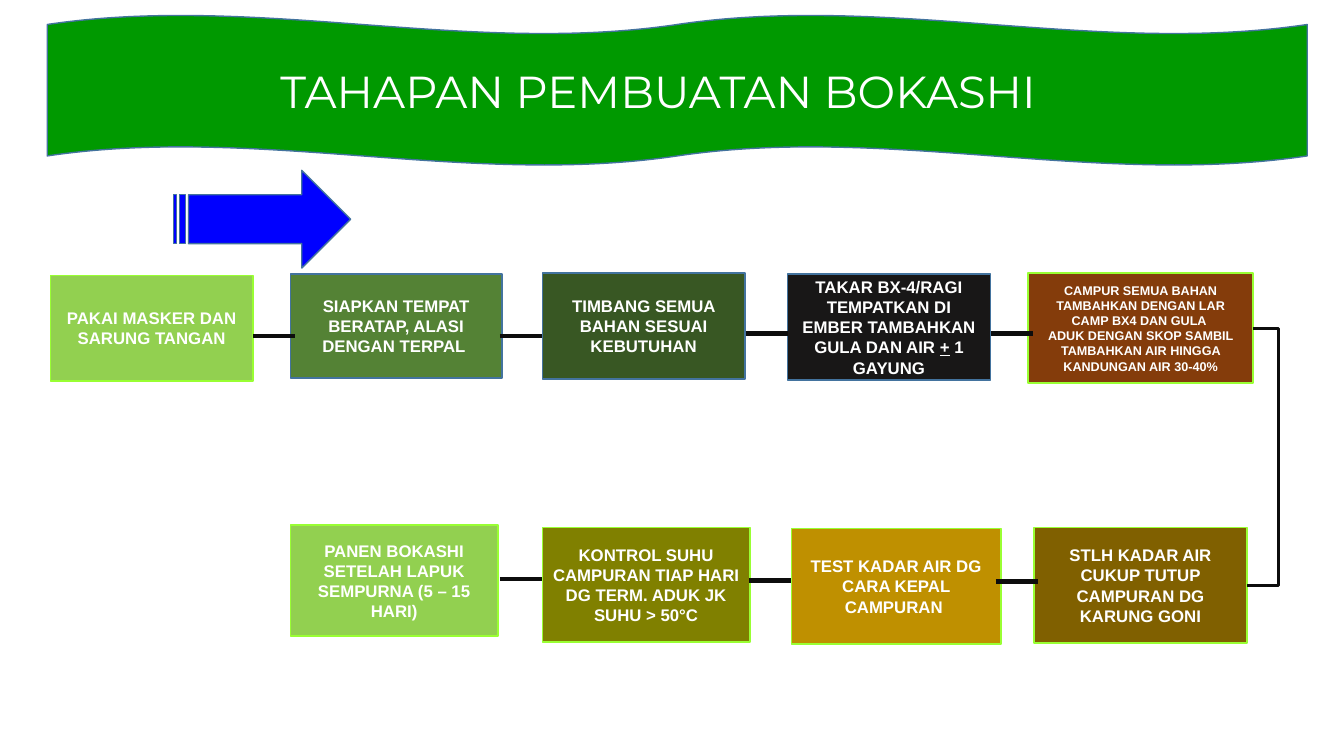
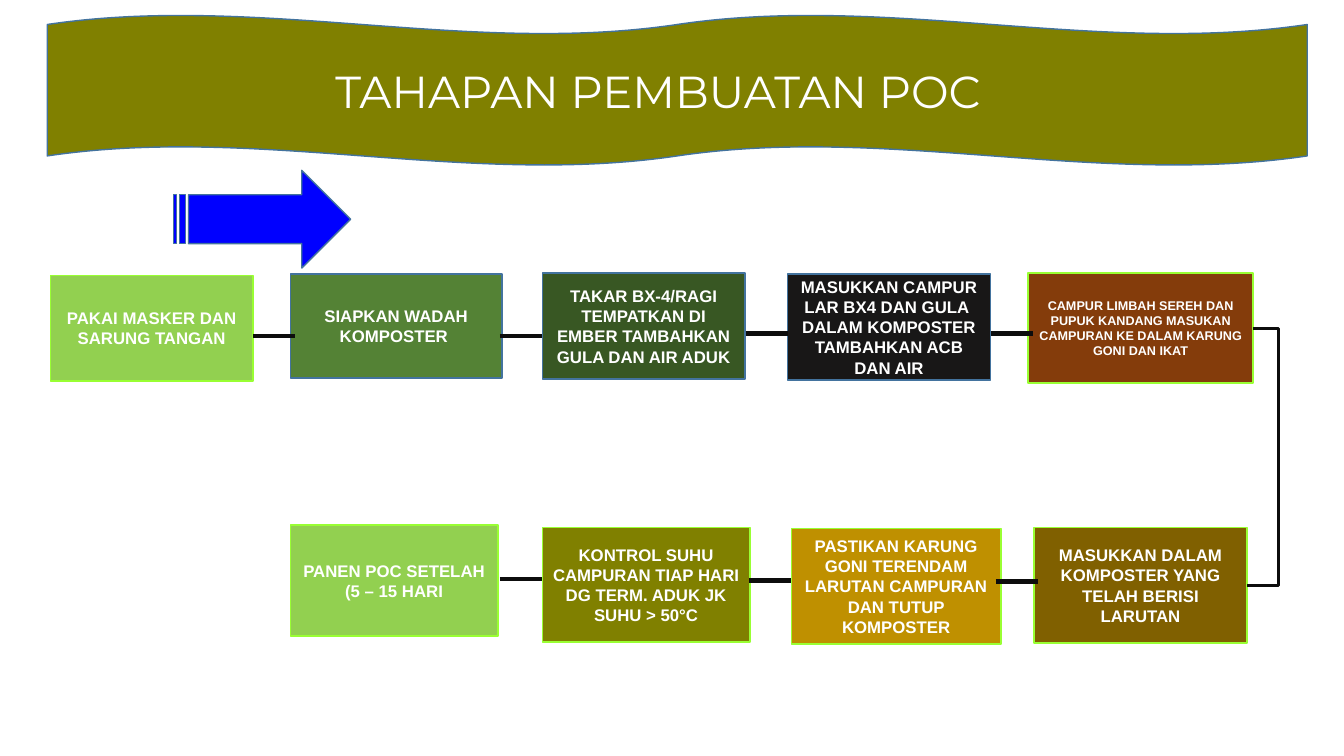
"""Builds two process-flow slides on making bokashi and liquid compost."""
from dataclasses import dataclass

from lxml import etree
from pptx import Presentation
from pptx.dml.color import RGBColor
from pptx.enum.shapes import MSO_CONNECTOR, MSO_SHAPE
from pptx.enum.text import MSO_ANCHOR, PP_ALIGN
from pptx.oxml.ns import qn
from pptx.util import Pt

WAVE, RECTANGLE = MSO_SHAPE.DOUBLE_WAVE, MSO_SHAPE.RECTANGLE
ARROW = MSO_SHAPE.STRIPED_RIGHT_ARROW
STRAIGHT, ELBOW = MSO_CONNECTOR.STRAIGHT, MSO_CONNECTOR.ELBOW
CENTER, MIDDLE = PP_ALIGN.CENTER, MSO_ANCHOR.MIDDLE
RIGHT_SIDE = 3

WHITE = RGBColor(0xFF, 0xFF, 0xFF)
INK = RGBColor(0x0D, 0x0D, 0x0D)
STEEL = RGBColor(0x43, 0x73, 0x9E)
LIME = RGBColor(0x99, 0xFF, 0x33)
BLUE = RGBColor(0x00, 0x00, 0xFF)
GREEN = RGBColor(0x00, 0x99, 0x00)
OLIVE = RGBColor(0x80, 0x80, 0x00)
LIGHT_GREEN = RGBColor(0x92, 0xD0, 0x50)
MID_GREEN = RGBColor(0x54, 0x82, 0x35)
DARK_GREEN = RGBColor(0x38, 0x57, 0x23)
BLACK = RGBColor(0x18, 0x17, 0x17)
RUST = RGBColor(0x84, 0x3C, 0x0B)
GOLD = RGBColor(0xBF, 0x90, 0x00)
BROWN = RGBColor(0x80, 0x60, 0x00)

TITLE_FONT, BODY_FONT = "Montserrat", "Arial"
LINK_LENGTH = 30.2
ELBOW_REACH = 18


@dataclass(frozen=True)
class Area:
    """A rectangle in points."""

    left: float
    top: float
    width: float
    height: float

    def lengths(self) -> tuple[Pt, Pt, Pt, Pt]:
        """Returns the four measures as lengths."""
        return Pt(self.left), Pt(self.top), Pt(self.width), Pt(self.height)


@dataclass(frozen=True)
class Step:
    """Place and look of one process box."""

    area: Area
    fill: RGBColor
    outline: RGBColor = LIME
    size: float = 12


@dataclass(frozen=True)
class Flow:
    """Content of one slide; text between bars is underlined."""

    title: str
    band: RGBColor
    texts: tuple[tuple[str, ...], ...]


BAND = Area(33.8, 10.8, 900, 107.3)
TITLE = Area(24.5, 41.8, 900, 46)
DIRECTION = Area(123.8, 121.7, 126.7, 69.8)

STEPS = (
    Step(Area(36, 196.6, 144.7, 75.6), LIGHT_GREEN),
    Step(Area(207.4, 195.8, 151.2, 74.2), MID_GREEN, STEEL),
    Step(Area(387.4, 195.1, 144.7, 75.6), DARK_GREEN, STEEL),
    Step(Area(562.3, 195.8, 145.4, 75.6), BLACK, STEEL),
    Step(Area(734.4, 195.1, 160.6, 78.5), RUST, size=9),
    Step(Area(738.7, 376.6, 151.9, 82.8), BROWN),
    Step(Area(565.2, 377.3, 149.8, 82.8), GOLD),
    Step(Area(387.4, 376.6, 148.3, 82.1), OLIVE),
    Step(Area(207.4, 375.1, 148.3, 79.2), LIGHT_GREEN),
)
TURN_START, TURN_END = 4, 5

LINK_STARTS = (
    (180.7, 239.8), (357.1, 239.8), (532.8, 238.3), (707.8, 238.3),
    (357.1, 413.3), (535, 414.7), (711.4, 415.4),
)

MASK = ("PAKAI MASKER DAN SARUNG TANGAN",)
CONTROL = ("KONTROL SUHU CAMPURAN TIAP HARI DG TERM. ADUK JK SUHU > 50°C",)

FLOWS = (
    Flow("TAHAPAN PEMBUATAN BOKASHI ", GREEN, (
        MASK,
        ("SIAPKAN TEMPAT BERATAP, ALASI DENGAN TERPAL ",),
        ("TIMBANG SEMUA BAHAN SESUAI KEBUTUHAN",),
        ("TAKAR BX-4/RAGI TEMPATKAN DI EMBER TAMBAHKAN GULA DAN AIR |+| 1 GAYUNG",),
        ("CAMPUR SEMUA BAHAN TAMBAHKAN DENGAN LAR CAMP BX4 DAN GULA ",
         "ADUK DENGAN SKOP SAMBIL TAMBAHKAN AIR HINGGA KANDUNGAN AIR 30-40%"),
        ("STLH KADAR AIR CUKUP TUTUP CAMPURAN DG KARUNG GONI",),
        ("TEST KADAR AIR DG CARA KEPAL CAMPURAN ",),
        CONTROL,
        ("PANEN BOKASHI SETELAH LAPUK SEMPURNA (5 – 15 HARI)",),
    )),
    Flow("TAHAPAN PEMBUATAN POC ", OLIVE, (
        MASK,
        ("SIAPKAN WADAH KOMPOSTER ",),
        ("TAKAR BX-4/RAGI TEMPATKAN DI EMBER TAMBAHKAN GULA DAN AIR ADUK",),
        ("MASUKKAN CAMPUR", "LAR BX4 DAN GULA ",
         "DALAM KOMPOSTER TAMBAHKAN ACB DAN AIR"),
        ("CAMPUR LIMBAH SEREH DAN PUPUK KANDANG MASUKAN CAMPURAN KE DALAM "
         "KARUNG GONI DAN IKAT",),
        ("MASUKKAN DALAM KOMPOSTER YANG TELAH BERISI LARUTAN",),
        ("PASTIKAN KARUNG GONI TERENDAM LARUTAN CAMPURAN DAN TUTUP KOMPOSTER",),
        CONTROL,
        ("PANEN POC SETELAH (5 – 15 HARI",),
    )),
)


def write(box, texts: tuple[str, ...], font: str, size: float, bold: bool) -> None:
    """Writes centred white paragraphs into a shape or text box."""
    frame = box.text_frame
    frame.word_wrap = True
    for index, text in enumerate(texts):
        para = frame.add_paragraph() if index else frame.paragraphs[0]
        para.alignment = CENTER
        para.font.name = font
        para.font.size = Pt(size)
        para.font.bold = bold
        para.font.color.rgb = WHITE
        for position, piece in enumerate(text.split("|")):
            span = para.add_run()
            span.text = piece
            if position % 2:
                span.font.underline = True


def add_figure(page, kind: MSO_SHAPE, area: Area, fill: RGBColor, outline: RGBColor):
    """Adds a flat filled shape with a thin outline."""
    figure = page.shapes.add_shape(kind, *area.lengths())
    figure.shadow.inherit = False
    figure.fill.solid()
    figure.fill.fore_color.rgb = fill
    figure.line.color.rgb = outline
    figure.line.width = Pt(1)
    return figure


def add_step(page, step: Step, texts: tuple[str, ...]):
    """Adds one process box with its text."""
    box = add_figure(page, RECTANGLE, step.area, step.fill, step.outline)
    box.text_frame.vertical_anchor = MIDDLE
    write(box, texts, BODY_FONT, step.size, True)
    return box


def add_link(page, kind: MSO_CONNECTOR, start: tuple, end: tuple, width: float):
    """Adds a dark connector without shadow."""
    link = page.shapes.add_connector(kind, *(Pt(value) for value in start + end))
    link.line.color.rgb = INK
    link.line.width = Pt(width)
    etree.SubElement(link._element.spPr, qn("a:effectLst"))
    return link


def add_turn(page, upper, lower) -> None:
    """Joins the right sides of two boxes with an elbow bulging outwards."""
    turn = add_link(page, ELBOW, (0, 0), (1, 1), 2.25)
    turn.begin_connect(upper, RIGHT_SIDE)
    turn.end_connect(lower, RIGHT_SIDE)
    ratio = -Pt(ELBOW_REACH) / turn.width
    geometry = turn._element.spPr.find(qn("a:prstGeom"))
    guides = geometry.find(qn("a:avLst"))
    if guides is None:
        guides = etree.SubElement(geometry, qn("a:avLst"))
    etree.SubElement(guides, qn("a:gd"), name="adj1", fmla=f"val {round(ratio * 100000)}")


def add_flow(deck, flow: Flow) -> None:
    """Adds one slide with band, title, boxes and links."""
    page = deck.slides.add_slide(deck.slide_layouts[6])
    add_figure(page, WAVE, BAND, flow.band, STEEL)
    title = page.shapes.add_textbox(*TITLE.lengths())
    write(title, (flow.title,), TITLE_FONT, 32, False)
    boxes = [add_step(page, step, texts) for step, texts in zip(STEPS, flow.texts)]
    for left, top in LINK_STARTS:
        add_link(page, STRAIGHT, (left, top), (left + LINK_LENGTH, top), 3)
    add_turn(page, boxes[TURN_START], boxes[TURN_END])
    add_figure(page, ARROW, DIRECTION, BLUE, STEEL)


def main() -> None:
    """Builds and saves the deck."""
    deck = Presentation()
    deck.slide_width, deck.slide_height = Pt(960), Pt(540)
    for flow in FLOWS:
        add_flow(deck, flow)
    deck.save("out.pptx")


if __name__ == "__main__":
    main()
